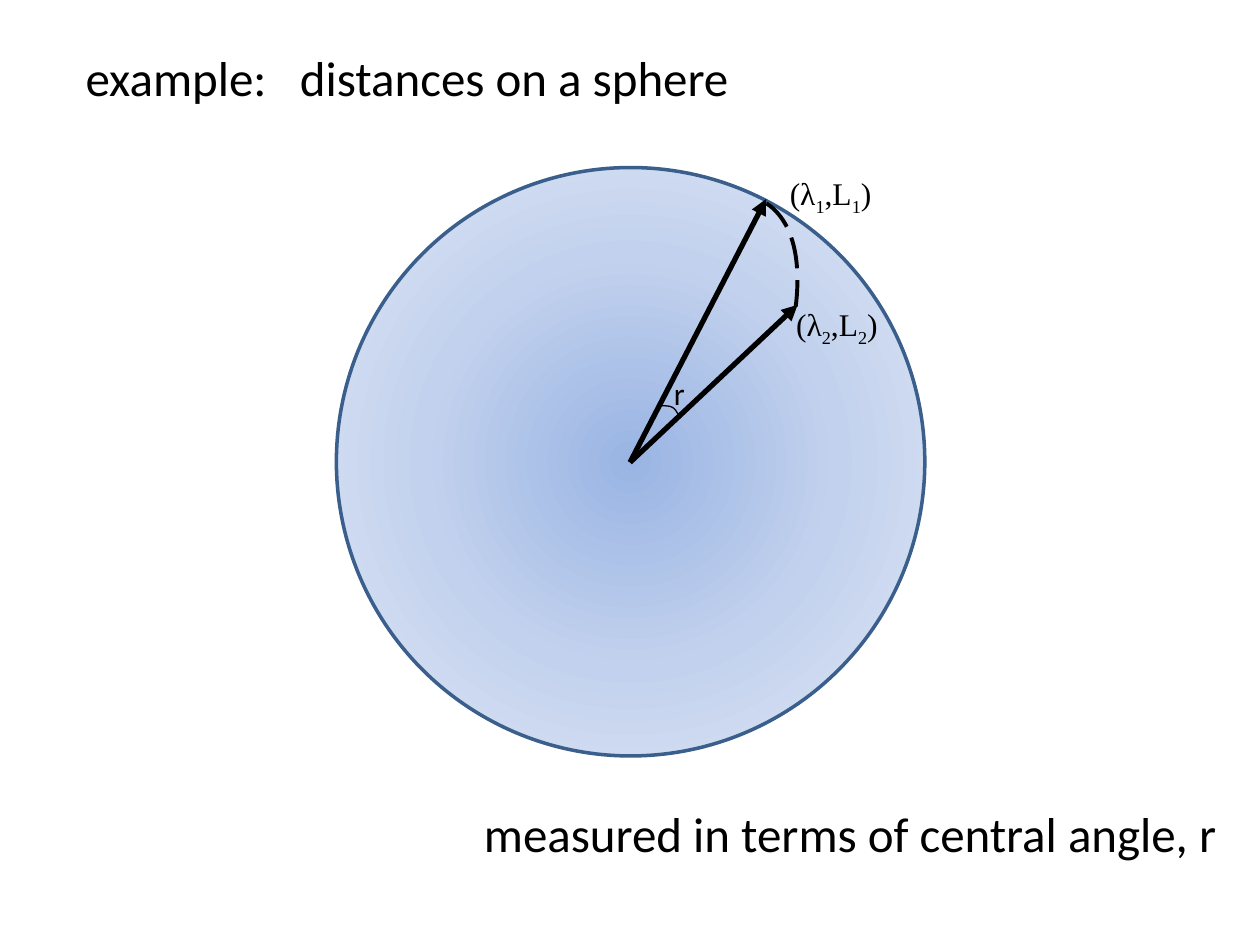
from lxml.etree import SubElement
from pptx import Presentation
from pptx.dml.color import RGBColor
from pptx.enum.dml import MSO_LINE
from pptx.enum.shapes import MSO_CONNECTOR, MSO_SHAPE
from pptx.enum.text import MSO_ANCHOR, MSO_AUTO_SIZE, PP_ALIGN
from pptx.oxml import parse_xml
from pptx.oxml.ns import nsdecls, qn
from pptx.util import Inches, Pt

COLORS = {"ink": "000000", "outline": "3A5F8C",
          "core": "9AB5E4", "middle": "C2D1ED", "edge": "E1E8F5"}
CENTER = (5, 3.67)
POINT_1 = (6.08, 1.58)
POINT_2 = (6.33, 2.42)


def set_line(shape, width, color="ink"):
    shape.line.color.rgb = RGBColor.from_string(COLORS[color])
    shape.line.width = Pt(width)


def place(shape, left, top, width, height):
    shape.left, shape.top = Inches(left), Inches(top)
    shape.width, shape.height = Inches(width), Inches(height)


def add_run(paragraph, text, size, font="Calibri", subscript=False):
    run = paragraph.add_run()
    run.text = text
    run.font.size = Pt(size)
    run.font.name = font
    run.font.color.rgb = RGBColor.from_string(COLORS["ink"])
    if subscript:
        run.font._element.set("baseline", "-25000")


def add_text_box(slide, left, top, width, height):
    """Add an empty wrapping box and return its first paragraph."""
    box = slide.shapes.add_textbox(
        Inches(left), Inches(top), Inches(width), Inches(height))
    box.text_frame.word_wrap = True
    box.text_frame.auto_size = MSO_AUTO_SIZE.SHAPE_TO_FIT_TEXT
    return box.text_frame.paragraphs[0]


def add_title(slide):
    title = slide.shapes.title
    place(title, 0.58, 0.33, 7.08, 0.57)
    frame = title.text_frame
    frame.auto_size = MSO_AUTO_SIZE.NONE
    frame.vertical_anchor = MSO_ANCHOR.TOP
    paragraph = frame.paragraphs[0]
    paragraph.alignment = PP_ALIGN.LEFT
    # A tab stop sets the gap after the first word
    tabs = SubElement(paragraph._p.get_or_add_pPr(), qn("a:tabLst"))
    SubElement(tabs, qn("a:tab"), pos=str(Inches(1.7)), algn="l")
    add_run(paragraph, "example:\tdistances on a sphere", 28)


def add_sphere(slide):
    sphere = slide.shapes.add_shape(
        MSO_SHAPE.OVAL, Inches(2.67), Inches(1.33), Inches(4.67), Inches(4.67))
    sphere.shadow.inherit = False
    set_line(sphere, 2, "outline")
    stops = "".join(
        f'<a:gs pos="{position}"><a:srgbClr val="{COLORS[name]}"/></a:gs>'
        for position, name in ((0, "core"), (50000, "middle"), (100000, "edge")))
    sphere.fill.gradient()
    properties = sphere._element.spPr
    properties.replace(properties.find(qn("a:gradFill")), parse_xml(
        f'<a:gradFill {nsdecls("a")}><a:gsLst>{stops}</a:gsLst>'
        '<a:path path="circle"><a:fillToRect l="50000" t="50000" r="50000" b="50000"/>'
        '</a:path></a:gradFill>'))


def add_radius(slide, end):
    radius = slide.shapes.add_connector(
        MSO_CONNECTOR.STRAIGHT, *(Inches(value) for value in CENTER + end))
    set_line(radius, 3)
    SubElement(radius.line._get_or_add_ln(), qn("a:tailEnd"), type="triangle")
    SubElement(radius._element.spPr, qn("a:effectLst"))


def add_distance_arc(slide):
    arc = slide.shapes.add_shape(
        MSO_SHAPE.ARC, Inches(3.94), Inches(1.26), Inches(1.92), Inches(4.31))
    arc.rotation = 33.3
    # Adjustments count 0.6 per degree
    arc.adjustments[0] = 270 * 0.6
    arc.adjustments[1] = 292 * 0.6
    arc.shadow.inherit = False
    arc.fill.background()
    set_line(arc, 2.25)
    arc.line.dash_style = MSO_LINE.LONG_DASH


def cubic_point(points, t):
    weights = ((1 - t) ** 3, 3 * t * (1 - t) ** 2, 3 * t ** 2 * (1 - t), t ** 3)
    return tuple(Inches(sum(weight * point[axis] for weight, point in zip(weights, points)))
                 for axis in (0, 1))


def add_angle_mark(slide):
    curves = (((5.23, 3.22), (5.27, 3.22), (5.31, 3.22), (5.33, 3.23)),
              ((5.33, 3.23), (5.36, 3.24), (5.37, 3.27), (5.39, 3.3)))
    steps = 8
    points = [cubic_point(curve, step / steps)
              for curve in curves for step in range(1, steps + 1)]
    builder = slide.shapes.build_freeform(*cubic_point(curves[0], 0))
    builder.add_line_segments(points, close=False)
    mark = builder.convert_to_shape()
    mark.shadow.inherit = False
    mark.fill.background()
    set_line(mark, 0.75)


def add_point_label(slide, left, top, index):
    paragraph = add_text_box(slide, left, top, 1, 0.4)
    for text in ("(λ", index, ",L", index, ")"):
        add_run(paragraph, text, 18, "Times New Roman", subscript=text == index)


def main():
    presentation = Presentation()
    presentation.slide_width, presentation.slide_height = Inches(10), Inches(7.5)
    slide = presentation.slides.add_slide(presentation.slide_layouts[5])
    add_title(slide)

    # Sphere with two radii and the distance between their ends
    add_sphere(slide)
    for end in (POINT_1, POINT_2):
        add_radius(slide, end)
    add_distance_arc(slide)

    # Central angle
    add_run(add_text_box(slide, 5.25, 2.92, 0.25, 0.4), "r", 18)
    add_angle_mark(slide)

    # Coordinates of the two points
    add_point_label(slide, 6.17, 1.33, "1")
    add_point_label(slide, 6.22, 2.37, "2")

    # Closing remark
    remark = add_text_box(slide, 3.58, 6.33, 6.17, 0.58)
    remark.alignment = PP_ALIGN.RIGHT
    add_run(remark, "measured in terms of central angle, r", 28)

    presentation.save("out.pptx")


if __name__ == "__main__":
    main()
